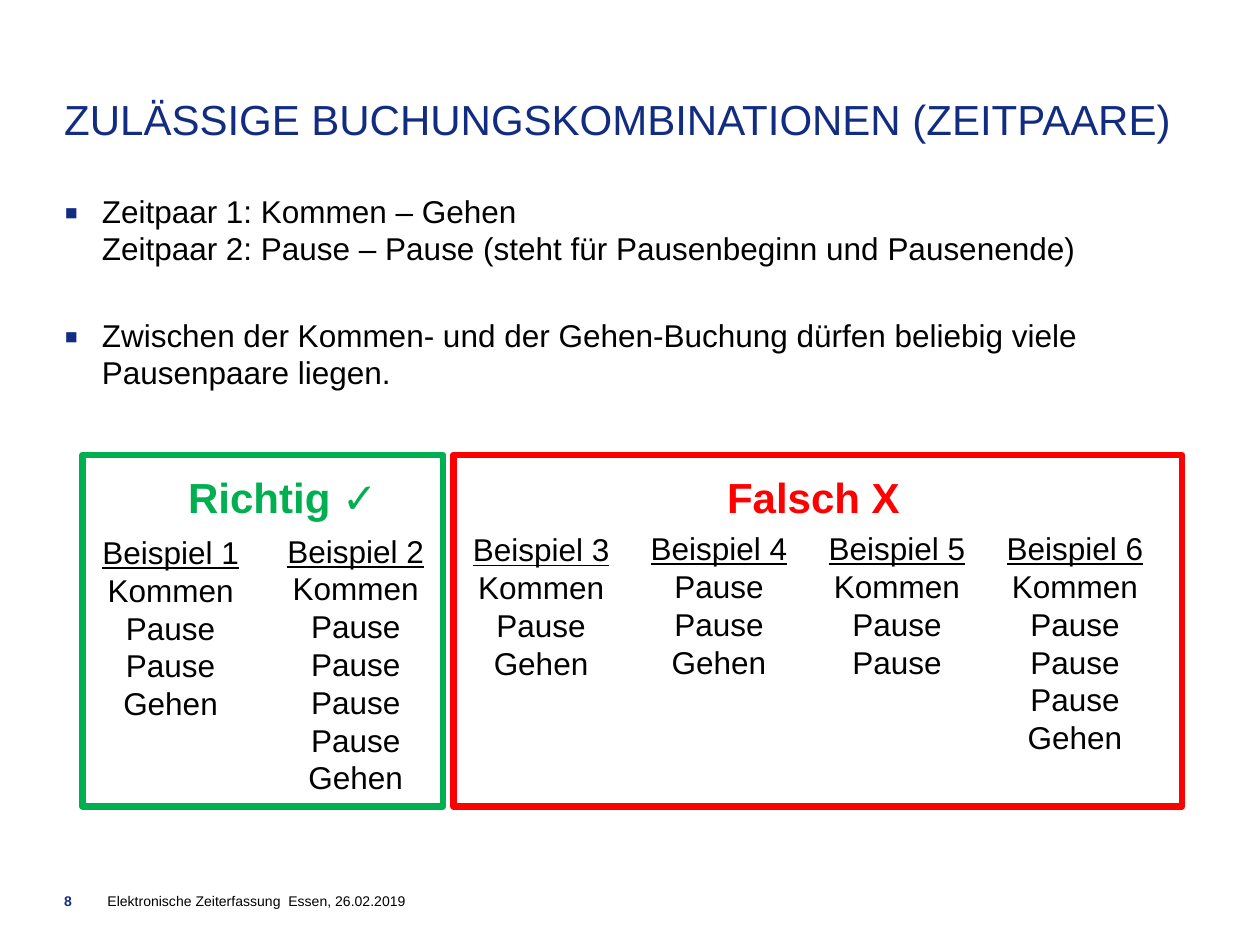
from dataclasses import dataclass

from lxml.etree import SubElement
from pptx import Presentation
from pptx.dml.color import RGBColor
from pptx.enum.shapes import MSO_SHAPE
from pptx.enum.text import MSO_ANCHOR, PP_ALIGN
from pptx.oxml.ns import qn
from pptx.util import Pt

NAVY = RGBColor(0x12, 0x2C, 0x82)
BLACK = RGBColor(0x00, 0x00, 0x00)
GREEN = RGBColor(0x00, 0xB0, 0x50)
RED = RGBColor(0xFF, 0x00, 0x00)
FONT = "Arial"
EXAMPLE_WIDTH = 91.4
FRAME_TOP, FRAME_HEIGHT = 259.9, 200.9
HEADING_TOP, HEADING_WIDTH = 269.3, 118.8


@dataclass(frozen=True)
class Box:
    left: float
    top: float
    width: float
    height: float

    def in_points(self) -> tuple:
        return Pt(self.left), Pt(self.top), Pt(self.width), Pt(self.height)


@dataclass(frozen=True)
class Example:
    top: float
    bookings: tuple


@dataclass(frozen=True)
class Group:
    heading: str
    color: RGBColor
    left: float
    width: float
    heading_left: float
    first_example_left: float
    example_step: float
    examples: tuple


GROUPS = (
    Group("Richtig ✓", GREEN, 47.3, 205.9, 102.2, 51.8, 105.8, (
        Example(304.6, ("Kommen", "Pause", "Pause", "Gehen")),
        Example(303.8, ("Kommen", "Pause", "Pause", "Pause", "Pause", "Gehen")),
    )),
    Group("Falsch X", RED, 259.2, 416.2, 405.4, 263.5, 101.7, (
        Example(303.1, ("Kommen", "Pause", "Gehen")),
        Example(302.4, ("Pause", "Pause", "Gehen")),
        Example(302.4, ("Kommen", "Pause", "Pause")),
        Example(302.4, ("Kommen", "Pause", "Pause", "Pause", "Gehen")),
    )),
)
BODY = (
    "Zeitpaar 1: Kommen – Gehen\v"
    "Zeitpaar 2: Pause – Pause (steht für Pausenbeginn und Pausenende)",
    "Zwischen der Kommen- und der Gehen-Buchung dürfen beliebig viele Pausenpaare liegen.",
)


def add_text(slide, box: Box, text: str, size: float, color: RGBColor,
             bold: bool = False, align=PP_ALIGN.LEFT, spacing: float = 1.0):
    """Add a text box without margins and return its text frame."""
    text_frame = slide.shapes.add_textbox(*box.in_points()).text_frame
    text_frame.word_wrap = True
    text_frame.margin_left = text_frame.margin_right = 0
    text_frame.margin_top = text_frame.margin_bottom = 0
    text_frame.text = text
    for paragraph in text_frame.paragraphs:
        paragraph.alignment = align
        paragraph.line_spacing = spacing
        for run in paragraph.runs:
            run.font.name = FONT
            run.font.size = Pt(size)
            run.font.bold = bold
            run.font.color.rgb = color
    return text_frame


def add_bullet(paragraph) -> None:
    properties = paragraph._p.get_or_add_pPr()
    properties.set("marL", str(Pt(21.5)))
    properties.set("indent", str(-Pt(21.5)))
    color = SubElement(properties, qn("a:buClr"))
    SubElement(color, qn("a:srgbClr"), val=str(NAVY))
    SubElement(properties, qn("a:buSzPct"), val="130000")
    SubElement(properties, qn("a:buFont"), typeface=FONT)
    SubElement(properties, qn("a:buChar"), char="▪")


def add_body(slide) -> None:
    text_frame = add_text(slide, Box(36.7, 110.9, 646.6, 361.4), "\n".join(BODY),
                          18, BLACK, spacing=0.98)
    for paragraph in text_frame.paragraphs:
        add_bullet(paragraph)
    text_frame.paragraphs[1].space_before = Pt(28.5)


def add_footer(slide) -> None:
    text_frame = add_text(slide, Box(61.4, 510.3, 407.5, 9.4),
                          "Elektronische Zeiterfassung\tEssen, 26.02.2019", 8, BLACK)
    properties = text_frame.paragraphs[0]._p.get_or_add_pPr()
    tab_stops = SubElement(properties, qn("a:tabLst"))
    SubElement(tab_stops, qn("a:tab"), pos=str(Pt(103.4)), algn="l")
    add_text(slide, Box(36.7, 510.3, 20.9, 9.4), "8", 8, NAVY, bold=True)


def add_group(slide, group: Group, first_number: int) -> None:
    """Draw a framed group of examples, numbered from first_number."""
    for index, example in enumerate(group.examples):
        lines = (f"Beispiel {first_number + index}", *example.bookings)
        box = Box(group.first_example_left + index * group.example_step, example.top,
                  EXAMPLE_WIDTH, 21.7 * len(lines))
        text_frame = add_text(slide, box, "\n".join(lines), 18, BLACK,
                              align=PP_ALIGN.CENTER)
        text_frame.paragraphs[0].runs[0].font.underline = True

    frame_box = Box(group.left, FRAME_TOP, group.width, FRAME_HEIGHT)
    frame = slide.shapes.add_shape(MSO_SHAPE.RECTANGLE, *frame_box.in_points())
    frame.shadow.inherit = False
    frame.fill.background()
    frame.line.color.rgb = group.color
    frame.line.width = Pt(3.75)

    add_text(slide, Box(group.heading_left, HEADING_TOP, HEADING_WIDTH, 28.8),
             group.heading, 24, group.color, bold=True, align=PP_ALIGN.CENTER)


def main() -> None:
    presentation = Presentation()
    presentation.slide_width, presentation.slide_height = Pt(720), Pt(540)
    slide = presentation.slides.add_slide(presentation.slide_layouts[6])

    title = add_text(slide, Box(36.7, 28.1, 646.6, 54),
                     "ZULÄSSIGE BUCHUNGSKOMBINATIONEN (ZEITPAARE)", 24, NAVY)
    title.vertical_anchor = MSO_ANCHOR.BOTTOM
    add_footer(slide)
    add_body(slide)
    first_number = 1
    for group in GROUPS:
        add_group(slide, group, first_number)
        first_number += len(group.examples)
    presentation.save("out.pptx")


if __name__ == "__main__":
    main()
